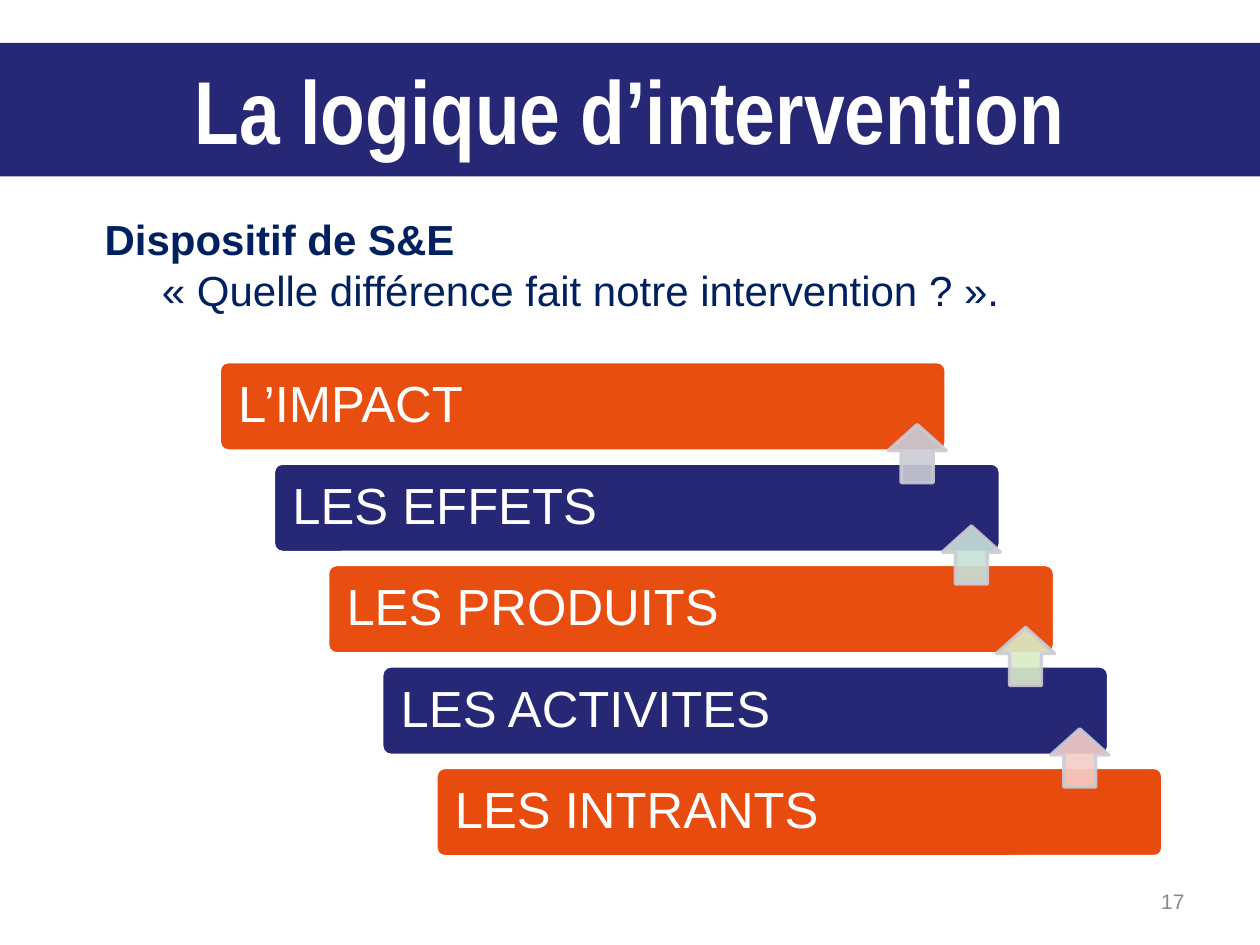
from lxml.etree import SubElement
from pptx import Presentation
from pptx.dml.color import RGBColor
from pptx.enum.shapes import MSO_SHAPE
from pptx.enum.text import MSO_ANCHOR, PP_ALIGN
from pptx.oxml.ns import qn
from pptx.util import Inches, Pt

WHITE = RGBColor(0xFF, 0xFF, 0xFF)
NAVY = RGBColor(0x26, 0x27, 0x75)
INK = RGBColor(0x00, 0x20, 0x60)
ORANGE = RGBColor(0xE8, 0x4E, 0x0F)
RUST = RGBColor(0xE7, 0x4B, 0x0E)
GREY = RGBColor(0x88, 0x88, 0x88)
SILVER = RGBColor(0xCB, 0xCB, 0xD5)
MINT = RGBColor(0xC7, 0xE1, 0xD9)
LIME = RGBColor(0xDA, 0xEC, 0xC7)
PINK = RGBColor(0xF5, 0xCD, 0xC8)

# The slide is a grid of 100 columns by 75 rows.
COLS, ROWS = 100, 75
CELL = Inches(0.1)

STEPS = [
    ("L’IMPACT", ORANGE),
    ("LES EFFETS", NAVY),
    ("LES PRODUITS", ORANGE),
    ("LES ACTIVITES", NAVY),
    ("LES INTRANTS", RUST),
]
TINTS = [SILVER, MINT, LIME, PINK]
STEP_X, STEP_Y = 4.3, 8.05


def grid(*cells):
    return [round(cell * CELL) for cell in cells]


def style(para, size, color, bold=False, name="Arial", align=PP_ALIGN.LEFT):
    para.alignment = align
    font = para.font
    font.name, font.size, font.bold = name, Pt(size), bold
    font.color.rgb = color


def inset(frame, side, edge):
    frame.margin_left = frame.margin_right = Inches(side)
    frame.margin_top = frame.margin_bottom = Inches(edge)


def add_title(slide, text):
    title = slide.shapes.title
    title.left, title.top, title.width, title.height = grid(0, 3.4, COLS, 10.6)
    title.fill.solid()
    title.fill.fore_color.rgb = NAVY
    frame = title.text_frame
    frame.text = text
    frame.vertical_anchor = MSO_ANCHOR.TOP
    inset(frame, 0.1, 0.1)
    style(frame.paragraphs[0], 51, WHITE, True, "Arial Narrow", PP_ALIGN.CENTER)


def add_box(slide, area, side=0.1):
    """Add an empty text box and return its text frame."""
    frame = slide.shapes.add_textbox(*grid(*area)).text_frame
    frame.word_wrap = True
    frame.vertical_anchor = MSO_ANCHOR.MIDDLE
    inset(frame, side, 0.05)
    return frame


def add_intro(slide):
    frame = add_box(slide, (7.4, 15.2, 78.3, 11.5), 0.09)
    head = frame.paragraphs[0]
    head.text = "Dispositif de S&E"
    style(head, 24, INK, True, align=PP_ALIGN.JUSTIFY)
    quote = frame.add_paragraph()
    quote.text = "« Quelle différence fait notre intervention ? ». "
    style(quote, 24, INK, align=PP_ALIGN.CENTER)


def add_shape(slide, kind, area, fill, line, adjust):
    shape = slide.shapes.add_shape(kind, *grid(*area))
    shape.shadow.inherit = False
    shape.fill.solid()
    shape.fill.fore_color.rgb = fill
    shape.line.color.rgb = line
    shape.line.width = Pt(2)
    for i, value in enumerate(adjust):
        shape.adjustments[i] = value
    return shape


def add_bar(slide, i, text, fill):
    area = 17.4 + i * STEP_X, 28.7 + i * STEP_Y, 57.7, 7.1
    bar = add_shape(slide, MSO_SHAPE.ROUNDED_RECTANGLE, area, fill, WHITE, [0.1])
    frame = bar.text_frame
    frame.text = text
    frame.vertical_anchor = MSO_ANCHOR.MIDDLE
    inset(frame, 0.13, 0.12)
    para = frame.paragraphs[0]
    style(para, 29, WHITE)
    para.line_spacing = 0.9


def add_arrow(slide, i, fill):
    area = 70.5 + i * STEP_X, 33.7 + i * STEP_Y, 4.6, 4.6
    arrow = add_shape(slide, MSO_SHAPE.UP_ARROW, area, fill, SILVER, [0.55, 0.45])
    for color in arrow._element.spPr.iter(qn("a:srgbClr")):
        SubElement(color, qn("a:alpha"), val="90000")


def add_number(slide, text):
    para = add_box(slide, (71.7, 69.5, 23.3, 4)).paragraphs[0]
    para.text = text
    style(para, 12, GREY, align=PP_ALIGN.RIGHT)


def main():
    deck = Presentation()
    deck.slide_width, deck.slide_height = COLS * CELL, ROWS * CELL
    slide = deck.slides.add_slide(deck.slide_layouts[5])
    add_number(slide, "17")
    add_title(slide, "La logique d’intervention")
    add_intro(slide)
    for i, (text, fill) in enumerate(STEPS):
        add_bar(slide, i, text, fill)
    for i, fill in enumerate(TINTS):
        add_arrow(slide, i, fill)
    deck.save("out.pptx")


if __name__ == "__main__":
    main()
